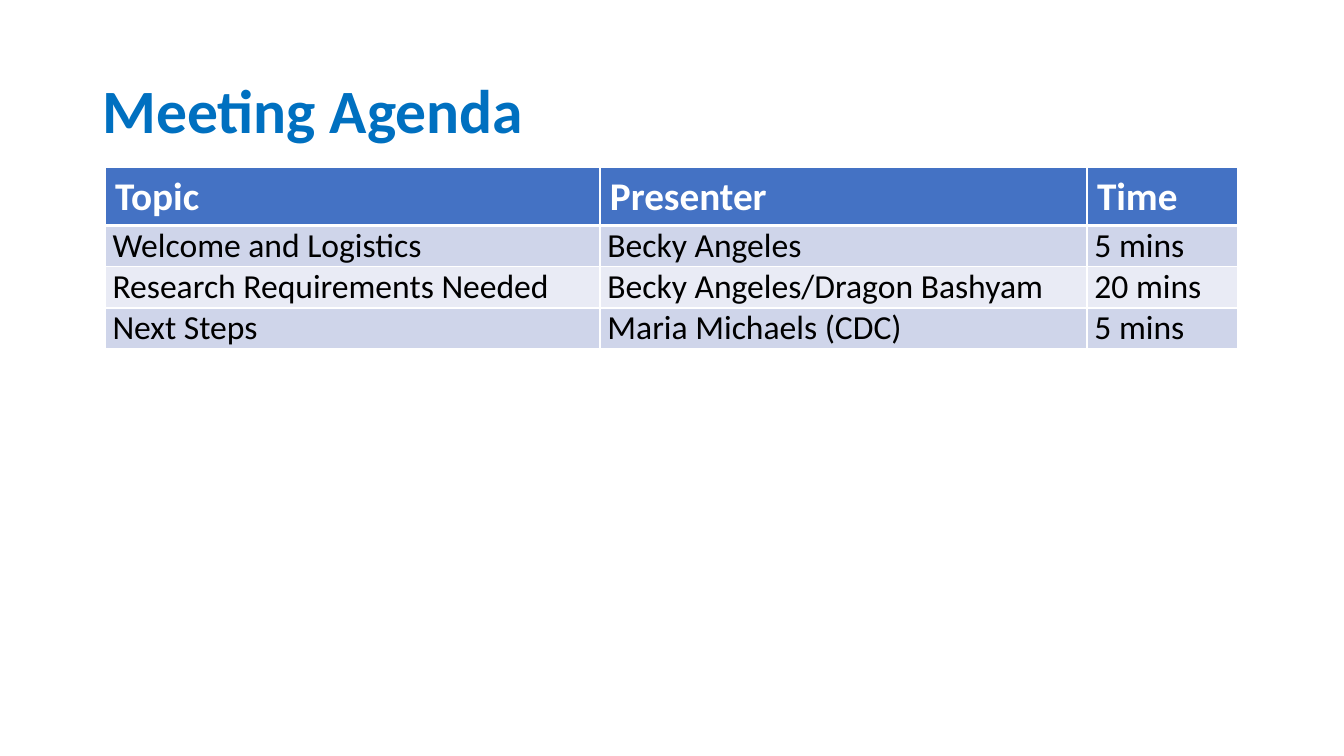
from lxml import etree
from pptx import Presentation
from pptx.dml.color import RGBColor
from pptx.enum import text
from pptx.oxml import ns
from pptx.util import Pt

FONT = "Calibri"
TITLE_BLUE = RGBColor(0x00, 0x70, 0xC0)
HEADER_BLUE = RGBColor(0x44, 0x72, 0xC4)
BANDS = (RGBColor(0xCF, 0xD5, 0xEA), RGBColor(0xE9, 0xEB, 0xF5))
WHITE = RGBColor(0xFF, 0xFF, 0xFF)
BLACK = RGBColor(0x00, 0x00, 0x00)

AGENDA = (
    ("Topic", "Presenter", "Time"),
    ("Welcome and Logistics", "Becky Angeles", "5 mins"),
    ("Research Requirements Needed", "Becky Angeles/Dragon Bashyam", "20 mins"),
    ("Next Steps", "Maria Michaels (CDC)", "5 mins"),
)
COLUMN_SHARES = (0.437, 0.43, 0.133)
HEADER_HEIGHT, ROW_HEIGHT = 41.4, 29.4


def style(para, size, color, bold):
    para.font.name = FONT
    para.font.size = Pt(size)
    para.font.bold = bold
    para.font.color.rgb = color


def add_border(cell, side, width):
    properties = cell._tc.get_or_add_tcPr()
    line = etree.SubElement(properties, ns.qn(f"a:ln{side}"), w=str(Pt(width)))
    fill = etree.SubElement(line, ns.qn("a:solidFill"))
    etree.SubElement(fill, ns.qn("a:srgbClr"), val=str(WHITE))


def add_title(page, left, top, width, height):
    box = page.shapes.add_textbox(Pt(left), Pt(top), Pt(width), Pt(height))
    frame = box.text_frame
    frame.word_wrap = True
    frame.vertical_anchor = text.MSO_ANCHOR.MIDDLE
    para = frame.paragraphs[0]
    para.text = "Meeting Agenda"
    para.line_spacing = 0.9
    style(para, 44, TITLE_BLUE, True)


def fill_cell(cell, words, row):
    # Borders come before the fill; the rule under the header is heavier
    widths = {"L": 1, "R": 1, "T": 3 if row == 1 else 1, "B": 3 if row == 0 else 1}
    for side, width in widths.items():
        add_border(cell, side, width)
    cell.fill.solid()
    para = cell.text_frame.paragraphs[0]
    para.text = words
    if row == 0:
        cell.fill.fore_color.rgb = HEADER_BLUE
        style(para, 28, WHITE, True)
    else:
        cell.fill.fore_color.rgb = BANDS[(row - 1) % 2]
        cell.margin_left = cell.margin_right = Pt(5.4)
        cell.margin_top = cell.margin_bottom = Pt(0)
        para.space_after = Pt(6)
        style(para, 24, BLACK, False)


def add_agenda(page, left, top, width):
    heights = [HEADER_HEIGHT] + [ROW_HEIGHT] * (len(AGENDA) - 1)
    table = page.shapes.add_table(
        len(AGENDA), len(COLUMN_SHARES), Pt(left), Pt(top), Pt(width), Pt(sum(heights))
    ).table
    for column, share in zip(table.columns, COLUMN_SHARES):
        column.width = Pt(width * share)
    for row, (entries, height) in enumerate(zip(AGENDA, heights)):
        table.rows[row].height = Pt(height)
        for column, words in enumerate(entries):
            fill_cell(table.cell(row, column), words, row)


def main():
    deck = Presentation()
    deck.slide_width, deck.slide_height = Pt(960), Pt(540)
    page = deck.slides.add_slide(deck.slide_layouts[6])
    add_title(page, 66, 28.75, 828, 104.4)
    add_agenda(page, 75, 119.75, 809)
    deck.save("out.pptx")


if __name__ == "__main__":
    main()
